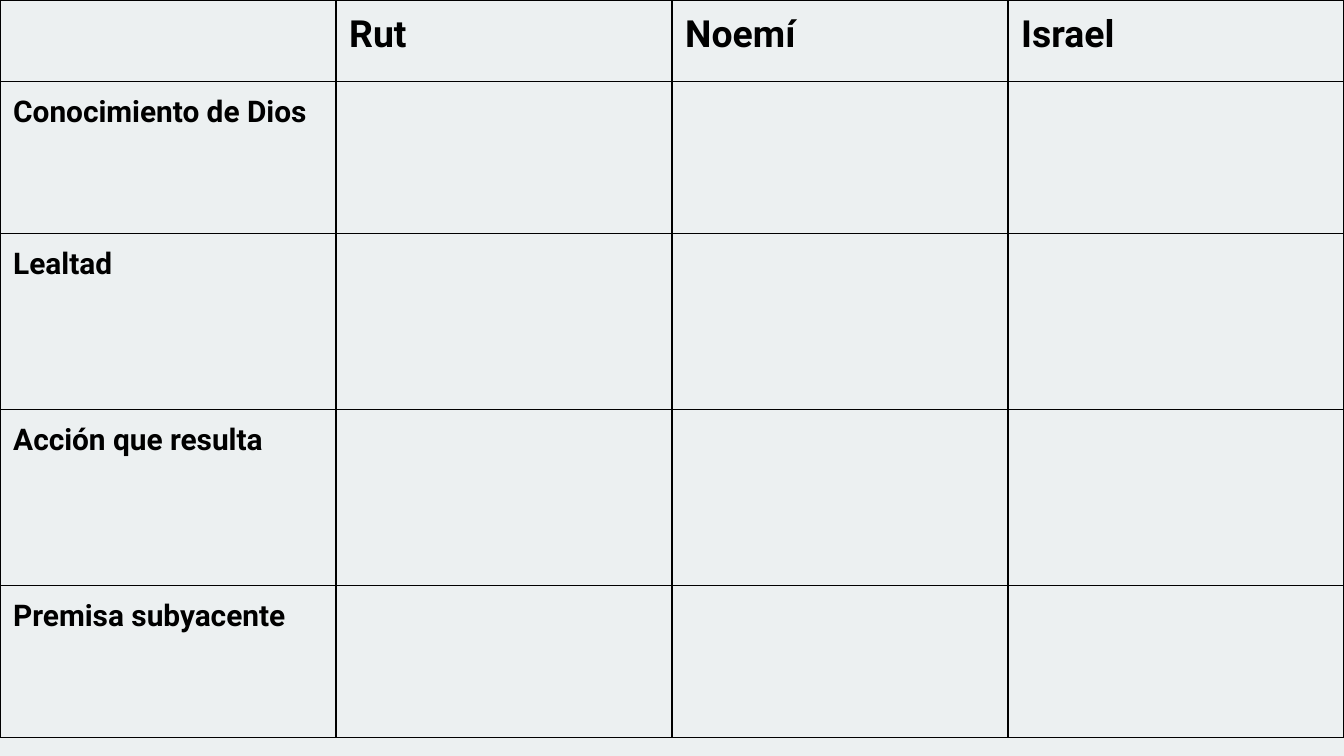
import pptx
import pptx.dml.color
import pptx.oxml
import pptx.oxml.ns
import pptx.util

Cm, Pt = pptx.util.Cm, pptx.util.Pt

COLORS = {"background": "ECF0F1", "text": "000000", "border": "000000"}
FONT = "Roboto"
HEADERS = ["", "Rut", "Noemí", "Israel"]
TOPICS = ["Conocimiento de Dios", "Lealtad", "Acción que resulta", "Premisa subyacente"]
ROWS = [HEADERS] + [[topic, "", "", ""] for topic in TOPICS]
ROW_HEIGHTS = [1.54, 2.87, 3.33, 3.33, 2.87]
COL_WIDTH = 6.35
HEADER_SIZE, TOPIC_SIZE = 20, 16
MARGIN = 0.25
BORDER_WIDTH = 0.75


def rgb(name):
    return pptx.dml.color.RGBColor.from_string(COLORS[name])


def add_borders(cell):
    tc_pr = cell._tc.get_or_add_tcPr()
    for i, side in enumerate(("lnL", "lnR", "lnT", "lnB")):
        line = pptx.oxml.parse_xml(
            f'<a:{side} {pptx.oxml.ns.nsdecls("a")} w="{Pt(BORDER_WIDTH)}">'
            f'<a:solidFill><a:srgbClr val="{COLORS["border"]}"/></a:solidFill>'
            f'</a:{side}>')
        tc_pr.insert(i, line)  # borders must precede the fill


def format_cell(cell, text, size):
    cell.margin_left = cell.margin_right = Cm(MARGIN)
    cell.margin_top = cell.margin_bottom = Cm(MARGIN)
    cell.fill.background()
    add_borders(cell)
    cell.text_frame.text = text
    p = cell.text_frame.paragraphs[0]
    for font in [p.font] + [r.font for r in p.runs]:
        font.name = FONT
        font.size = Pt(size)
        font.bold = True
        font.color.rgb = rgb("text")


def main():
    prs = pptx.Presentation()
    prs.slide_width, prs.slide_height = Cm(25.4), Cm(14.29)
    s = prs.slides.add_slide(prs.slide_layouts[6])
    s.background.fill.solid()
    s.background.fill.fore_color.rgb = rgb("background")

    table = s.shapes.add_table(
        len(ROWS), len(HEADERS), Cm(0), Cm(0),
        Cm(COL_WIDTH * len(HEADERS)), Cm(sum(ROW_HEIGHTS))).table
    table.first_row = table.horz_banding = False
    for column in table.columns:
        column.width = Cm(COL_WIDTH)
    for i, (texts, height) in enumerate(zip(ROWS, ROW_HEIGHTS)):
        table.rows[i].height = Cm(height)
        for j, text in enumerate(texts):
            format_cell(table.cell(i, j), text, TOPIC_SIZE if i else HEADER_SIZE)

    prs.save("out.pptx")


if __name__ == "__main__":
    main()
